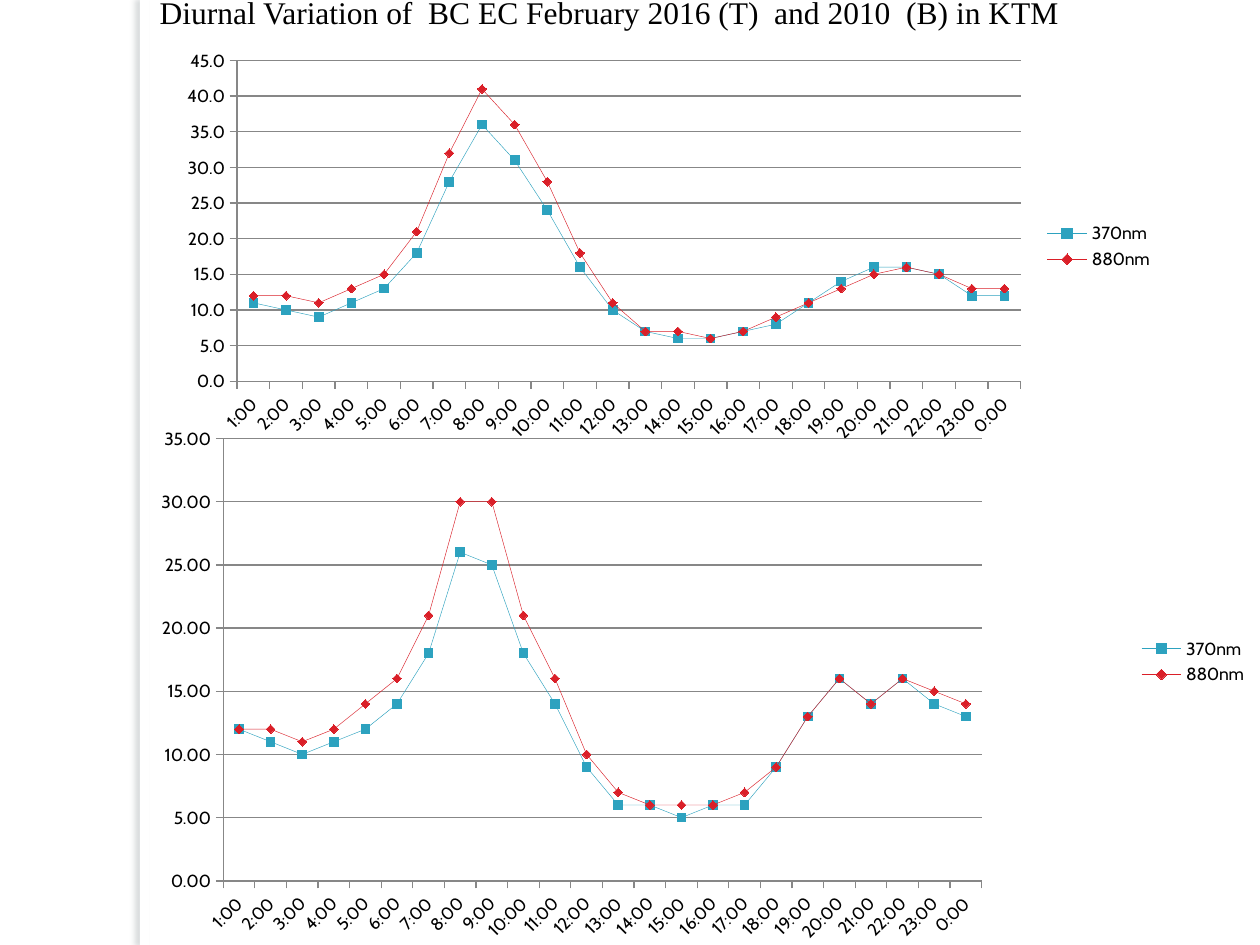
from dataclasses import dataclass

import pptx
import pptx.chart.data
import pptx.dml.color
import pptx.enum.chart
import pptx.enum.shapes
import pptx.enum.text
import pptx.oxml
import pptx.oxml.ns
import pptx.util
from pptx.util import Cm

DRAWING = 'xmlns:a="http://schemas.openxmlformats.org/drawingml/2006/main"'
CHARTING = 'xmlns:c="http://schemas.openxmlformats.org/drawingml/2006/chart"'
HOURS = [f"{hour % 24}:00" for hour in range(1, 25)]
MARKER = pptx.enum.chart.XL_MARKER_STYLE


@dataclass
class Frame:
    left: float
    top: float
    width: float
    height: float

    def lengths(self) -> list[Cm]:
        return [Cm(value) for value in (self.left, self.top, self.width, self.height)]


@dataclass
class Wavelength:
    name: str
    color: str
    marker: MARKER


@dataclass
class DiurnalChart:
    frame: Frame
    plot: Frame
    number_format: str
    maximum: int
    readings: list[list[int]]


WAVELENGTHS = [
    Wavelength("370nm", "2DA2BF", MARKER.SQUARE),
    Wavelength("880nm", "DA1F28", MARKER.DIAMOND),
]

FEBRUARY_2016 = DiurnalChart(
    Frame(3.38, 0.84, 20.12, 8.25), Frame(1.4, 0.38, 15.8, 6.47), "0.0", 45,
    [
        [11, 10, 9, 11, 13, 18, 28, 36, 31, 24, 16, 10,
         7, 6, 6, 7, 8, 11, 14, 16, 16, 15, 12, 12],
        [12, 12, 11, 13, 15, 21, 32, 41, 36, 28, 18, 11,
         7, 7, 6, 7, 9, 11, 13, 15, 16, 15, 13, 13],
    ],
)
FEBRUARY_2010 = DiurnalChart(
    Frame(2.97, 7.62, 22.43, 11.43), Frame(1.53, 1.22, 15.29, 8.92), "0.00", 35,
    [
        [12, 11, 10, 11, 12, 14, 18, 26, 25, 18, 14, 9,
         6, 6, 5, 6, 6, 9, 13, 16, 14, 16, 14, 13],
        [12, 12, 11, 12, 14, 16, 21, 30, 30, 21, 16, 10,
         7, 6, 6, 6, 7, 9, 13, 16, 14, 16, 15, 14],
    ],
)


def color(value: str) -> pptx.dml.color.RGBColor:
    return pptx.dml.color.RGBColor.from_string(value)


def paint_line(line, value: str, width: float) -> None:
    line.color.rgb = color(value)
    line.width = pptx.util.Pt(width)


def add_edge(page) -> None:
    edge = page.shapes.add_shape(
        pptx.enum.shapes.MSO_SHAPE.RECTANGLE, *Frame(2.82, 0, 0.2, 19.05).lengths())
    edge.fill.solid()
    edge.fill.fore_color.rgb = color("FFFFFF")
    edge.line.fill.background()
    edge._element.spPr.append(pptx.oxml.parse_xml(
        f'<a:effectLst {DRAWING}><a:outerShdw blurRad="38100" dist="38100" dir="10800000">'
        '<a:srgbClr val="6E7A7D"><a:alpha val="25000"/></a:srgbClr>'
        '</a:outerShdw></a:effectLst>'))


def add_title(page, text: str) -> None:
    box = page.shapes.add_textbox(*Frame(2.97, -0.26, 19.48, 1.8).lengths())
    box.text_frame.word_wrap = True
    box.text_frame.vertical_anchor = pptx.enum.text.MSO_ANCHOR.TOP
    span = box.text_frame.paragraphs[0].add_run()
    span.text = text
    span.font.name = "Times New Roman"
    span.font.size = pptx.util.Pt(18)
    span.font.color.rgb = color("000000")


def place_plot(chart, diurnal: DiurnalChart) -> None:
    plot, frame = diurnal.plot, diurnal.frame
    plot_area = chart._chartSpace.chart.plotArea
    for old in plot_area.findall(pptx.oxml.ns.qn("c:layout")):
        plot_area.remove(old)
    plot_area.insert(0, pptx.oxml.parse_xml(
        f'<c:layout {CHARTING}><c:manualLayout><c:layoutTarget val="inner"/>'
        '<c:xMode val="edge"/><c:yMode val="edge"/>'
        f'<c:x val="{plot.left / frame.width}"/><c:y val="{plot.top / frame.height}"/>'
        f'<c:w val="{plot.width / frame.width}"/><c:h val="{plot.height / frame.height}"/>'
        '</c:manualLayout></c:layout>'))


def style_axes(chart, diurnal: DiurnalChart) -> None:
    hours, levels = chart.category_axis, chart.value_axis
    for axis in (hours, levels):
        axis.major_tick_mark = pptx.enum.chart.XL_TICK_MARK.OUTSIDE
        axis.minor_tick_mark = pptx.enum.chart.XL_TICK_MARK.NONE
        axis.tick_labels.font.size = pptx.util.Pt(10)
        paint_line(axis.format.line, "878787", 0.75)
    hours._element.find(".//" + pptx.oxml.ns.qn("a:bodyPr")).set("rot", "-2700000")
    levels.minimum_scale = 0
    levels.maximum_scale = diurnal.maximum
    levels.major_unit = 5
    levels.has_major_gridlines = True
    paint_line(levels.major_gridlines.format.line, "878787", 0.75)
    levels.tick_labels.number_format = diurnal.number_format
    levels.tick_labels.number_format_is_linked = False


def add_diurnal_chart(page, diurnal: DiurnalChart) -> None:
    table = pptx.chart.data.CategoryChartData(number_format=diurnal.number_format)
    table.categories = HOURS
    for wavelength, values in zip(WAVELENGTHS, diurnal.readings):
        table.add_series(wavelength.name, values)
    chart = page.shapes.add_chart(
        pptx.enum.chart.XL_CHART_TYPE.LINE_MARKERS, *diurnal.frame.lengths(), table).chart
    chart.has_title = False
    chart.font.name = "Cabin"
    chart.font.size = pptx.util.Pt(10)
    chart.font.color.rgb = color("000000")
    chart._chartSpace.find(pptx.oxml.ns.qn("c:txPr")).addprevious(pptx.oxml.parse_xml(
        f'<c:spPr {CHARTING} {DRAWING}><a:noFill/><a:ln><a:noFill/></a:ln></c:spPr>'))
    chart.has_legend = True
    chart.legend.position = pptx.enum.chart.XL_LEGEND_POSITION.RIGHT
    chart.legend.include_in_layout = False
    chart.plots[0].vary_by_categories = False
    style_axes(chart, diurnal)
    place_plot(chart, diurnal)
    for wavelength, series in zip(WAVELENGTHS, chart.plots[0].series):
        series.smooth = False
        paint_line(series.format.line, wavelength.color, 0.25)
        series.marker.style = wavelength.marker
        series.marker.size = 5
        series.marker.format.fill.solid()
        series.marker.format.fill.fore_color.rgb = color(wavelength.color)
        paint_line(series.marker.format.line, wavelength.color, 0.25)


def main() -> None:
    deck = pptx.Presentation()
    deck.slide_width, deck.slide_height = Cm(25.4), Cm(19.05)
    page = deck.slides.add_slide(deck.slide_layouts[6])
    add_edge(page)
    add_diurnal_chart(page, FEBRUARY_2016)
    add_title(page, "Diurnal Variation of  BC EC February 2016 (T)  and 2010  (B) in KTM")
    add_diurnal_chart(page, FEBRUARY_2010)
    deck.save("out.pptx")


if __name__ == "__main__":
    main()
